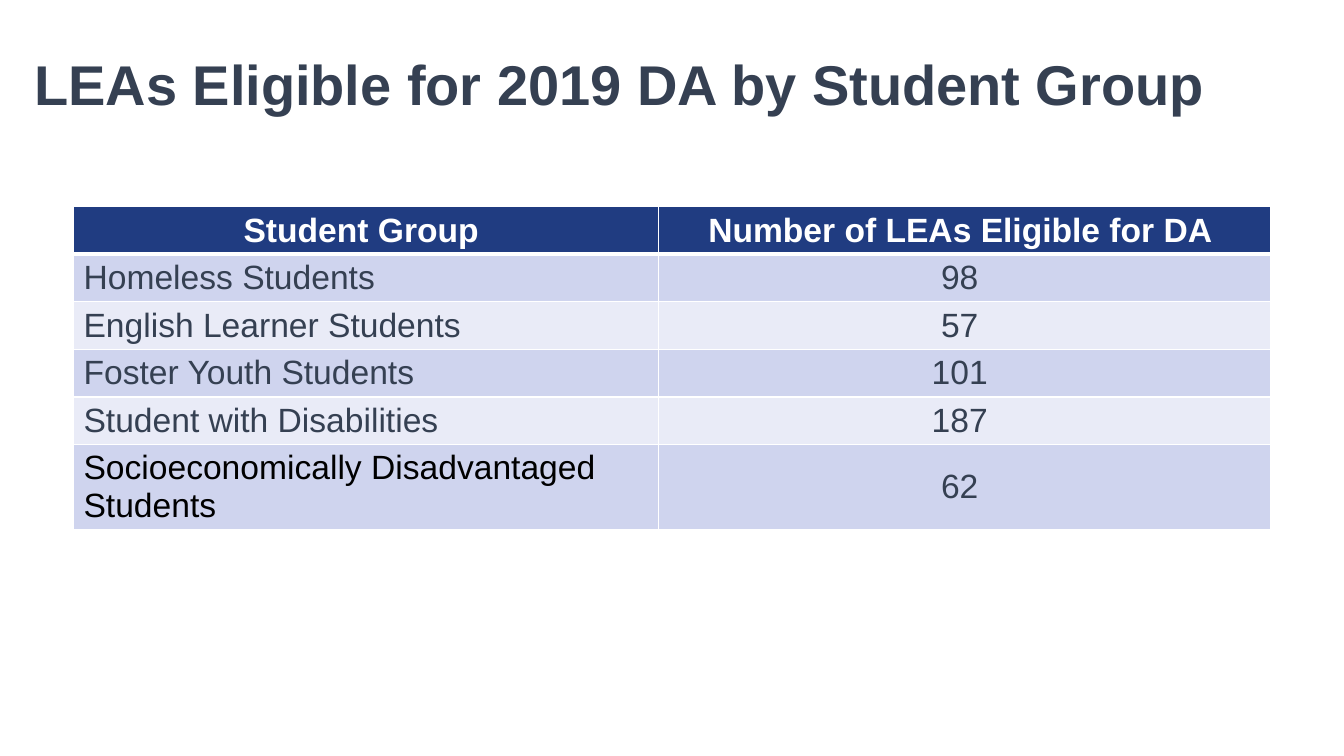
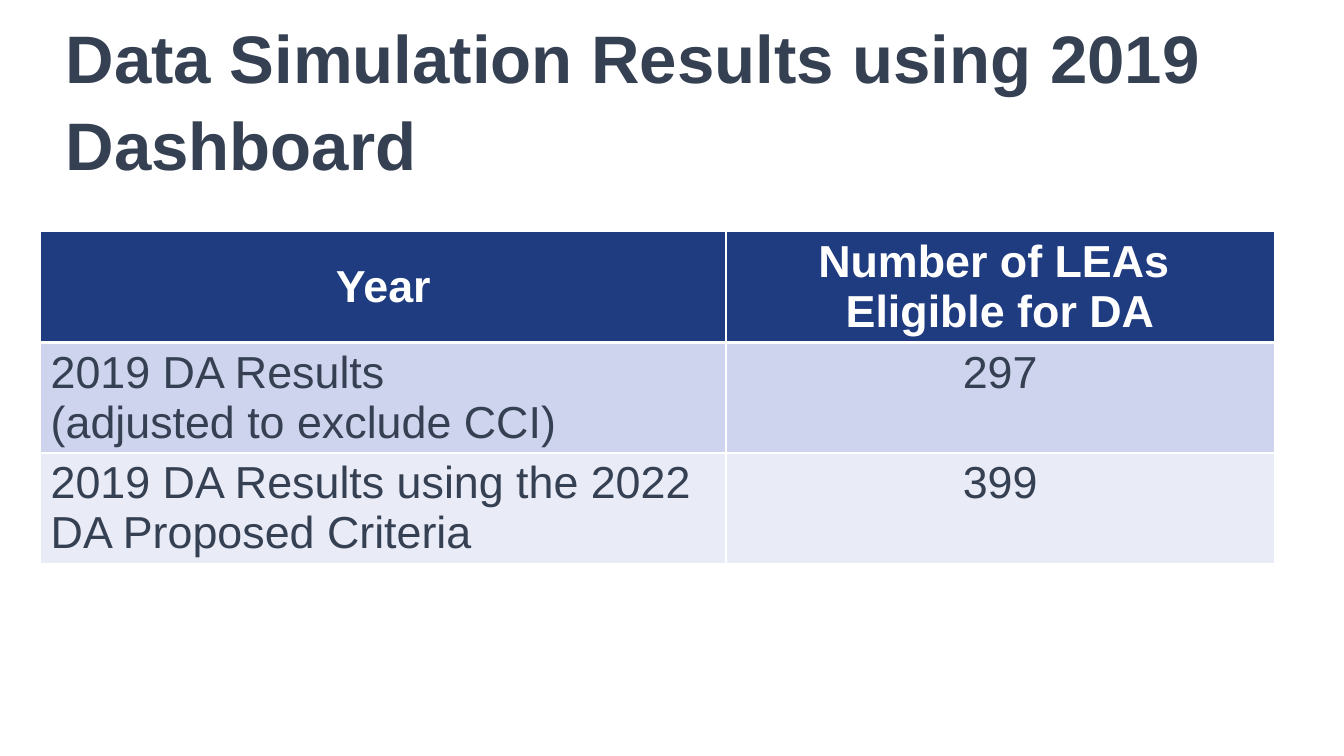
from lxml.etree import SubElement
from pptx import Presentation
from pptx.dml.color import RGBColor
from pptx.enum.text import MSO_ANCHOR as Anchor, MSO_AUTO_SIZE as AutoSize, PP_ALIGN as Align
from pptx.oxml.ns import qn
from pptx.util import Pt

FONT = "Arial"
BLACK = RGBColor(0x00, 0x00, 0x00)
WHITE = RGBColor(0xFF, 0xFF, 0xFF)
SLATE = RGBColor(0x35, 0x40, 0x52)
NAVY = RGBColor(0x20, 0x3C, 0x81)
BANDS = (RGBColor(0xE9, 0xEB, 0xF7), RGBColor(0xCF, 0xD4, 0xEE))
TITLE_ONLY = 5
THIN, THICK = 1, 3

STUDENT_GROUPS = [
    ("Student Group ", "Number of LEAs Eligible for DA "),
    ("Homeless Students", "98 "),
    ("English Learner Students", "57 "),
    ("Foster Youth Students", "101 "),
    ("Student with Disabilities", "187 "),
    ("Socioeconomically Disadvantaged Students", "62 "),
]
SIMULATION = [
    ("Year", "Number of LEAs \vEligible for DA"),
    ("2019 DA Results\n(adjusted to exclude CCI)", "297"),
    ("2019 DA Results using the 2022 DA Proposed Criteria", "399"),
]


def style_text(text_frame, size, color, bold, alignment):
    for paragraph in text_frame.paragraphs:
        paragraph.alignment = alignment
        for run in paragraph.runs:
            run.font.name = FONT
            run.font.size = Pt(size)
            run.font.bold = bold
            run.font.color.rgb = color


def add_border(cell, side, width):
    line = SubElement(cell._tc.get_or_add_tcPr(), qn(f"a:ln{side}"), w=str(Pt(width)))
    fill = SubElement(line, qn("a:solidFill"))
    SubElement(fill, qn("a:srgbClr"), val=str(WHITE))


def add_title(slide, text, box, size):
    title = slide.shapes.title
    title.left, title.top, title.width, title.height = map(Pt, box)
    text_frame = title.text_frame
    text_frame.text = text
    text_frame.word_wrap = True
    text_frame.auto_size = AutoSize.NONE
    text_frame.vertical_anchor = Anchor.MIDDLE
    text_frame.paragraphs[0].line_spacing = 1.08
    style_text(text_frame, size, SLATE, True, Align.LEFT)


def style_cell(cell, row, column, size, number_anchor):
    header = row == 0
    centered = header or column == 1
    add_border(cell, "L", THIN)
    add_border(cell, "R", THIN)
    add_border(cell, "T", THICK if row == 1 else THIN)
    add_border(cell, "B", THICK if header else THIN)
    cell.fill.solid()
    cell.fill.fore_color.rgb = NAVY if header else BANDS[row % 2]
    if header:
        cell.vertical_anchor = Anchor.MIDDLE
    else:
        cell.vertical_anchor = number_anchor if centered else Anchor.TOP
    style_text(cell.text_frame, size, WHITE if header else SLATE, header,
               Align.CENTER if centered else Align.LEFT)


def add_table(slide, rows, left, top, column_widths, row_heights, size, number_anchor):
    frame = slide.shapes.add_table(len(rows), len(column_widths), Pt(left), Pt(top),
                                   Pt(sum(column_widths)), Pt(sum(row_heights)))
    table = frame.table
    for column, width in zip(table.columns, column_widths):
        column.width = Pt(width)
    for row, height in zip(table.rows, row_heights):
        row.height = Pt(height)
    for row, texts in enumerate(rows):
        for column, text in enumerate(texts):
            cell = table.cell(row, column)
            cell.text = text
            style_cell(cell, row, column, size, number_anchor)
    return table


def build_student_groups(presentation):
    slide = presentation.slides.add_slide(presentation.slide_layouts[TITLE_ONLY])
    add_title(slide, "LEAs Eligible for 2019 DA by Student Group ", (17.3, 35.3, 899.3, 44.6), 40)
    table = add_table(slide, STUDENT_GROUPS, 52.5, 147.6, (417.6, 437.5),
                      [34] * 5 + [60.8], 24, Anchor.MIDDLE)
    last_label = table.cell(len(STUDENT_GROUPS) - 1, 0)
    style_text(last_label.text_frame, 24, BLACK, False, Align.LEFT)


def build_simulation(presentation):
    slide = presentation.slides.add_slide(presentation.slide_layouts[TITLE_ONLY])
    add_title(slide, "Data Simulation Results using 2019 Dashboard", (39.6, 21.6, 904.3, 95.8), 48)
    add_table(slide, SIMULATION, 29, 165.6, (489.6, 391.7), [78.8] * 3, 32, Anchor.TOP)


def main():
    presentation = Presentation()
    presentation.slide_width = Pt(960)
    presentation.slide_height = Pt(540)
    build_student_groups(presentation)
    build_simulation(presentation)
    presentation.save("out.pptx")


if __name__ == "__main__":
    main()
